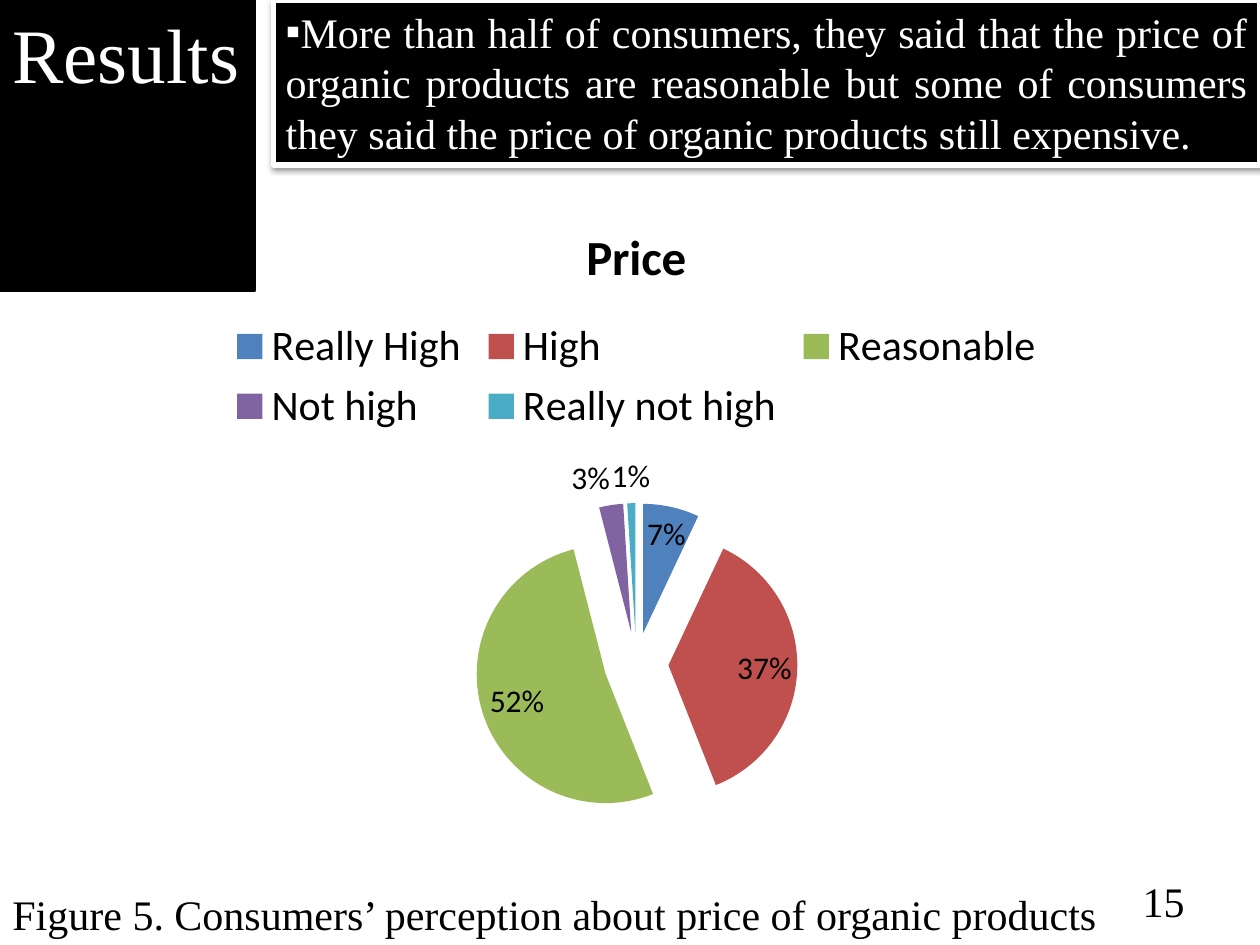
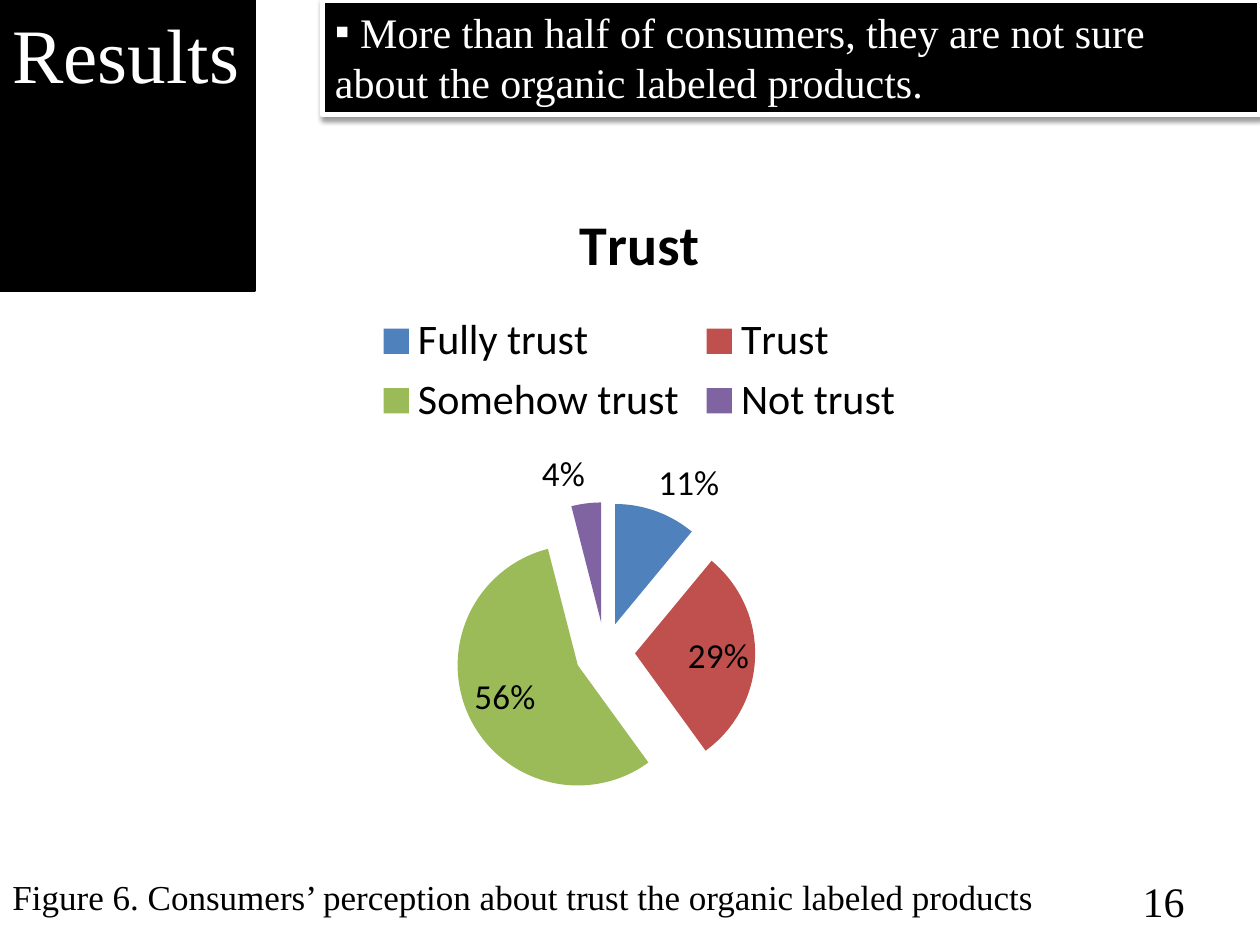
from dataclasses import dataclass

from lxml.etree import SubElement
from pptx import Presentation
from pptx.chart.data import CategoryChartData as Data
from pptx.dml.color import RGBColor as Rgb
from pptx.enum.chart import XL_CHART_TYPE as Kind
from pptx.enum.chart import XL_LABEL_POSITION as Spot
from pptx.enum.chart import XL_LEGEND_POSITION as Side
from pptx.enum.shapes import MSO_SHAPE as Form
from pptx.enum.text import MSO_ANCHOR as Anchor
from pptx.enum.text import MSO_AUTO_SIZE as Fit
from pptx.enum.text import PP_ALIGN as Align
from pptx.oxml.ns import qn
from pptx.util import Pt

COLORS = {
    "black": "000000", "white": "FFFFFF", "blue": "4F81BD", "red": "C0504D",
    "green": "9BBB59", "purple": "8064A2", "teal": "4BACC6",
}
SLICES = ["blue", "red", "green", "purple", "teal"]
SERIF = "Times New Roman"
SANS = "Calibri"
WIDTH, HEIGHT = 720, 540
TITLE_ONLY = 5


@dataclass
class Box:
    left: float
    top: float
    width: float
    height: float

    def sides(self) -> list:
        return [Pt(n) for n in (self.left, self.top, self.width, self.height)]


@dataclass
class Pie:
    name: str
    votes: dict
    box: Box
    size: int
    head: int


@dataclass
class Note:
    text: str
    box: Box
    size: int = 24
    align: Align = Align.LEFT


@dataclass
class Page:
    pie: Pie
    claim: Note
    figure: Note
    number: str


PAGES = [
    Page(
        Pie("Price", {"Really High": 7, "High": 37, "Reasonable": 52,
                      "Not high": 3, "Really not high": 1},
            Box(76.3, 111.6, 574.6, 370), 18, 28),
        Note("More than half of consumers, they said that the price of organic "
             "products are reasonable but some of consumers they said the price "
             "of organic products still expensive.",
             Box(156.2, 0, WIDTH - 156.2, 94.3), align=Align.JUSTIFY),
        Note("Figure 5. Consumers’ perception about price of organic products",
             Box(0, 504, 650, 36)),
        "15",
    ),
    Page(
        Pie("Trust", {"Fully trust": 11, "Trust": 29, "Somehow trust": 56,
                      "Not trust": 4},
            Box(82.1, 100.1, 566.6, 368.6), 20, 32),
        Note(" More than half of consumers, they are not sure about the organic "
             "labeled products.", Box(184.3, 0, WIDTH - 184.3, 65.5)),
        Note("Figure 6. Consumers’ perception about trust the organic labeled "
             "products", Box(0, 496.8, 686, 31.5), 20),
        "16",
    ),
]


def color(name: str) -> Rgb:
    return Rgb.from_string(COLORS[name])


def style(font, size: float, face: str, tint: str = "black") -> None:
    font.size, font.name = Pt(size), face
    font.color.rgb = color(tint)


def write(shape, note: Note, tint: str = "black", wrap: bool = True,
          anchor: Anchor = Anchor.TOP, fit: Fit = Fit.SHAPE_TO_FIT_TEXT):
    frame = shape.text_frame
    frame.auto_size, frame.word_wrap = fit, wrap
    frame.vertical_anchor = anchor
    para = frame.paragraphs[0]
    para.alignment = note.align
    run = para.add_run()
    run.text = note.text
    style(run.font, note.size, SERIF, tint)
    return para


def paint(shape, edge: str, weight: float) -> None:
    shape.fill.solid()
    shape.fill.fore_color.rgb = color("black")
    shape.line.color.rgb = color(edge)
    shape.line.width = Pt(weight)


def add_text(slide, note: Note, **rest) -> None:
    write(slide.shapes.add_textbox(*note.box.sides()), note, **rest)


def add_head(slide) -> None:
    note = Note("Results", Box(0, 0, 145.6, 60.6), 44)
    head = slide.shapes.title
    head.left, head.top, head.width, head.height = note.box.sides()
    paint(head, "black", 2)
    write(head, note, "white", wrap=False)


def add_claim(slide, note: Note) -> None:
    panel = slide.shapes.add_shape(Form.RECTANGLE, *note.box.sides())
    paint(panel, "white", 3)
    para = write(panel, note, "white")
    props = para._p.get_or_add_pPr()
    SubElement(props, qn("a:buFont"), typeface="Arial")
    SubElement(props, qn("a:buChar"), char="▪")
    panel.shadow.inherit = False
    glow = panel._element.spPr.find(qn("a:effectLst"))
    cast = SubElement(glow, qn("a:outerShdw"), blurRad=str(Pt(3.1)),
                      dist=str(Pt(1.6)), dir="5400000", rotWithShape="0")
    shade = SubElement(cast, qn("a:srgbClr"), val=COLORS["black"])
    SubElement(shade, qn("a:alpha"), val="38000")


def add_pie(slide, pie: Pie) -> None:
    data = Data()
    data.categories = list(pie.votes)
    data.add_series(pie.name, list(pie.votes.values()))
    chart = slide.shapes.add_chart(Kind.PIE, *pie.box.sides(), data).chart
    style(chart.font, pie.size, SANS)

    chart.has_title = True
    run = chart.chart_title.text_frame.paragraphs[0].add_run()
    run.text = pie.name
    run.font.bold = True
    style(run.font, pie.head, SANS)
    chart.chart_title.include_in_layout = False

    chart.has_legend = True
    chart.legend.position = Side.TOP
    chart.legend.include_in_layout = False
    style(chart.legend.font, 24, SANS)

    plot = chart.plots[0]
    plot.vary_by_categories = True
    series = plot.series[0]
    root = series._element
    burst = SubElement(root, qn("c:explosion"), val="25")
    root.find(qn("c:cat")).addprevious(burst)
    for spot, tint in enumerate(SLICES[:len(pie.votes)]):
        fill = series.points[spot].format.fill
        fill.solid()
        fill.fore_color.rgb = color(tint)

    tags = series.data_labels
    tags.show_value, tags.show_percentage = False, True
    tags.number_format, tags.number_format_is_linked = "0%", False
    tags.position = Spot.BEST_FIT
    style(tags.font, pie.size, SANS)


def main() -> None:
    deck = Presentation()
    deck.slide_width, deck.slide_height = Pt(WIDTH), Pt(HEIGHT)
    for page in PAGES:
        slide = deck.slides.add_slide(deck.slide_layouts[TITLE_ONLY])
        add_pie(slide, page.pie)
        add_claim(slide, page.claim)
        add_head(slide)
        add_text(slide, page.figure)
        folio = Note(page.number, Box(516, 500.5, 168, 28.75), align=Align.RIGHT)
        add_text(slide, folio, anchor=Anchor.MIDDLE, fit=Fit.NONE)
    deck.save("out.pptx")


if __name__ == "__main__":
    main()
